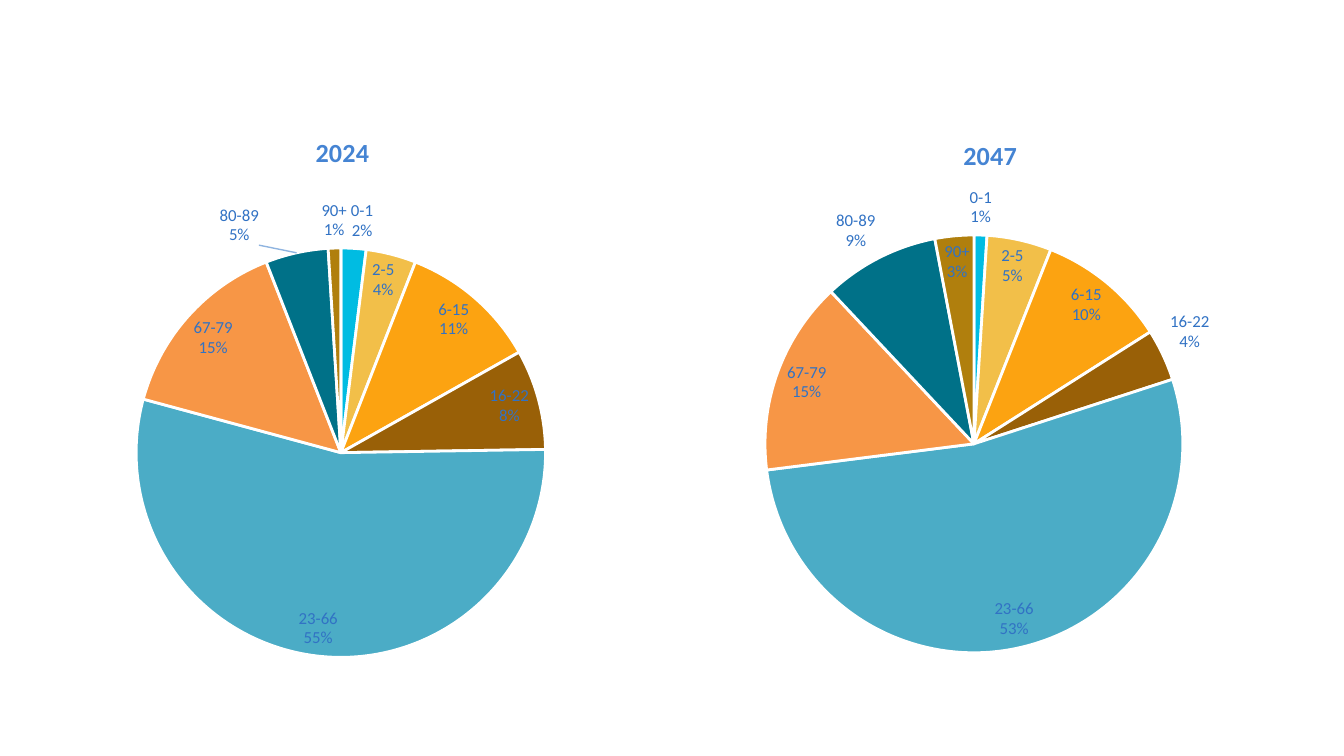
from dataclasses import dataclass
from lxml.etree import _Element
from pptx import Presentation
from pptx.chart.chart import Chart
from pptx.chart.data import CategoryChartData
from pptx.dml.color import RGBColor
from pptx.enum.chart import XL_CHART_TYPE, XL_LABEL_POSITION
from pptx.oxml import parse_xml
from pptx.oxml.ns import nsdecls
from pptx.slide import Slide
from pptx.text.text import Font
from pptx.util import Pt

FONT_NAME = "Calibri"
WHITE = RGBColor(0xFF, 0xFF, 0xFF)
NAVY = RGBColor(0x1F, 0x49, 0x7D)
TITLE_BLUE = RGBColor(0x45, 0x84, 0xD3)
LABEL_BLUE = RGBColor(0x31, 0x72, 0xC4)
LEADER_BLUE = RGBColor(0x8F, 0xB4, 0xE0)
AGE_COLORS = {
    "0-1": RGBColor(0x00, 0xBC, 0xE2),
    "2-5": RGBColor(0xF2, 0xBF, 0x49),
    "6-15": RGBColor(0xFC, 0xA3, 0x11),
    "16-22": RGBColor(0x99, 0x60, 0x07),
    "23-66": RGBColor(0x4B, 0xAC, 0xC6),
    "67-79": RGBColor(0xF7, 0x96, 0x46),
    "80-89": RGBColor(0x00, 0x71, 0x88),
    "90+": RGBColor(0xB0, 0x7F, 0x0D),
}
MOVED_AGE = list(AGE_COLORS).index("80-89")
PERCENT_FORMAT = '0"%"'


@dataclass(frozen=True)
class AgePie:
    year: str
    shares: tuple[int, ...]
    left: float
    top: float
    width: float
    height: float
    title_at: tuple[float, float]
    plot_box: tuple[float, float, float, float]
    label_shift: tuple[float, float]


PIES = (
    AgePie("2047", (1, 5, 10, 4, 53, 15, 9, 3), 365.8, 55.4, 328.3, 306.7,
           (0.45, 0.05), (0.13, 0.23, 0.69, 0.73), (0, 0)),
    AgePie("2024", (2, 4, 11, 8, 55, 15, 5, 1), 31, 60.5, 322.6, 301,
           (0.42, 0.03), (0.13, 0.24, 0.68, 0.73), (-0.06, 0)),
)


def layout_xml(values: tuple[float, ...], edge: bool = True) -> _Element:
    """Return a manual chart layout from fractions of the chart size."""
    target = '<c:layoutTarget val="inner"/>' if len(values) == 4 else ""
    modes = '<c:xMode val="edge"/><c:yMode val="edge"/>' if edge else ""
    sizes = "".join(f'<c:{key} val="{value}"/>' for key, value in zip("xywh", values))
    return parse_xml(f'<c:layout {nsdecls("c")}><c:manualLayout>{target}{modes}{sizes}'
                     "</c:manualLayout></c:layout>")


def style_font(font: Font, size: float, color: RGBColor, bold: bool = False) -> None:
    """Set the typeface, size, weight and colour of a font."""
    font.name, font.size, font.bold = FONT_NAME, Pt(size), bold
    font.color.rgb = color


def add_title(chart: Chart, pie: AgePie) -> None:
    """Place the year above the pie."""
    title = chart.chart_title
    title.text_frame.text = pie.year
    style_font(title.text_frame.paragraphs[0].runs[0].font, 14, TITLE_BLUE, True)
    element = title._element
    for layout in element.xpath("c:layout"):
        element.remove(layout)
    element.xpath("c:tx")[0].addnext(layout_xml(pie.title_at))


def add_labels(chart: Chart, pie: AgePie) -> None:
    """Label each slice with its age group and share."""
    series = chart.plots[0].series[0]
    labels = series.data_labels
    labels.show_category_name = labels.show_value = True
    labels.number_format, labels.number_format_is_linked = PERCENT_FORMAT, False
    labels.position = XL_LABEL_POSITION.BEST_FIT
    style_font(labels.font, 9, LABEL_BLUE)
    moved = series.points[MOVED_AGE].data_label
    moved.position = XL_LABEL_POSITION.OUTSIDE_END
    style_font(moved.font, 9, LABEL_BLUE)

    group = labels._element
    label = group.xpath("c:dLbl")[0]
    label.xpath("c:showCatName")[0].set("val", "1")
    label.xpath("c:idx")[0].addnext(parse_xml(
        f"<c:numFmt {nsdecls('c')} formatCode='{PERCENT_FORMAT}' sourceLinked='0'/>"))
    if any(pie.label_shift):
        label.xpath("c:idx")[0].addnext(layout_xml(pie.label_shift, edge=False))
    for owner in (group, label):
        last_flag = owner.xpath("c:showBubbleSize | c:showPercent")[-1]
        last_flag.addnext(parse_xml(f'<c:separator {nsdecls("c")}>\n</c:separator>'))
    for leader in group.xpath("c:showLeaderLines"):
        group.remove(leader)
    separator = group.xpath("c:separator")[0]
    separator.addnext(parse_xml(
        f'<c:leaderLines {nsdecls("c", "a")}><c:spPr><a:ln w="9525"><a:solidFill>'
        f'<a:srgbClr val="{LEADER_BLUE}"/></a:solidFill></a:ln></c:spPr></c:leaderLines>'))
    separator.addnext(parse_xml(f'<c:showLeaderLines {nsdecls("c")} val="1"/>'))


def add_pie(page: Slide, pie: AgePie) -> None:
    """Draw the age distribution of one year."""
    data = CategoryChartData()
    data.categories = list(AGE_COLORS)
    data.add_series("Series 1", pie.shares)
    chart = page.shapes.add_chart(XL_CHART_TYPE.PIE, Pt(pie.left), Pt(pie.top),
                                  Pt(pie.width), Pt(pie.height), data).chart
    chart.has_legend = False
    style_font(chart.font, 10, NAVY)
    plot = chart.plots[0]
    plot.vary_by_categories = True
    for index, color in enumerate(AGE_COLORS.values()):
        look = plot.series[0].points[index].format
        look.fill.solid()
        look.fill.fore_color.rgb = color
        look.line.color.rgb = WHITE
        look.line.width = Pt(1.5)
    add_title(chart, pie)
    add_labels(chart, pie)
    area = chart._chartSpace.xpath("c:chart/c:plotArea")[0]
    for layout in area.xpath("c:layout"):
        area.remove(layout)
    area.insert(0, layout_xml(pie.plot_box))


def main() -> None:
    """Build the deck with both pies."""
    deck = Presentation()
    deck.slide_width, deck.slide_height = Pt(720), Pt(405)
    page = deck.slides.add_slide(deck.slide_layouts[6])
    for pie in PIES:
        add_pie(page, pie)
    deck.save("out.pptx")


if __name__ == "__main__":
    main()
